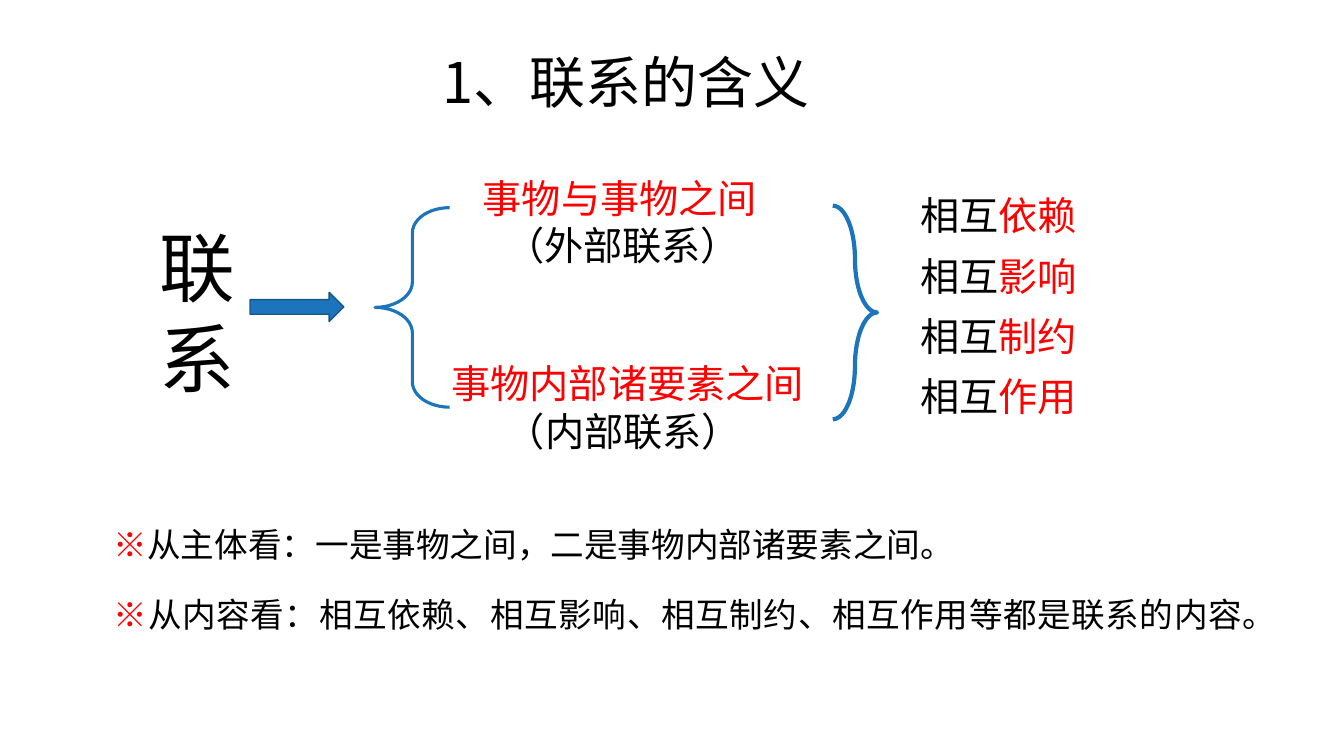
import dataclasses

import pptx
import pptx.dml.color
import pptx.enum.shapes
import pptx.enum.text
import pptx.util

Inches = pptx.util.Inches
Pt = pptx.util.Pt
Align = pptx.enum.text.PP_ALIGN
Shape = pptx.enum.shapes.MSO_SHAPE


@dataclasses.dataclass(frozen=True)
class Theme:
    black: str = "000000"
    red: str = "FF0000"
    blue: str = "1C75BC"
    edge: str = "15578B"
    head: str = "Noto Sans CJK SC"
    body: str = "Arial"
    title: int = 40
    term: int = 54
    text: int = 28
    note: int = 24


THEME = Theme()


def color(code):
    return pptx.dml.color.RGBColor.from_string(code)


def place(shape, box):
    shape.left, shape.top, shape.width, shape.height = map(Inches, box)


def write(frame, lines, size, font, gap=0):
    """Fill a frame with lines, each a list of (text, colour) runs."""
    frame.word_wrap = True
    frame.vertical_anchor = pptx.enum.text.MSO_ANCHOR.TOP
    for row, line in enumerate(lines):
        para = frame.paragraphs[0] if row == 0 else frame.add_paragraph()
        para.alignment = Align.LEFT
        if row and gap:
            para.space_before = Pt(gap)
        for text, code in line:
            run = para.add_run()
            run.text = text
            run.font.size = Pt(size)
            run.font.name = font
            run.font.color.rgb = color(code)


def add_text(slide, box, lines, size, font, gap=0):
    frame = slide.shapes.add_textbox(*map(Inches, box)).text_frame
    write(frame, lines, size, font, gap)
    return frame


def indent(para, first=0.0, left=0.0):
    props = para._p.get_or_add_pPr()
    props.set("marL", str(Inches(left)))
    props.set("indent", str(Inches(first)))


def add_title(slide, box):
    title = slide.shapes.title
    place(title, box)
    title.text_frame.auto_size = pptx.enum.text.MSO_AUTO_SIZE.NONE
    write(title.text_frame, [[("1、联系的含义", THEME.black)]],
          THEME.title, THEME.head)
    title.text_frame.paragraphs[0].line_spacing = 1.0


def add_mark(slide, kind, box, line, weight, fill=None, bend=None):
    mark = slide.shapes.add_shape(kind, *map(Inches, box))
    mark.shadow.inherit = False
    if fill:
        mark.fill.solid()
        mark.fill.fore_color.rgb = color(fill)
    else:
        mark.fill.background()
    mark.line.color.rgb = color(line)
    mark.line.width = Pt(weight)
    if bend:
        mark.adjustments[0] = bend


def add_branch(slide, box, name, kind, inset):
    frame = add_text(slide, box, [[(name, THEME.red)], [(kind, THEME.black)]],
                     THEME.text, THEME.body)
    indent(frame.paragraphs[1], left=inset)


def add_diagram(slide, box):
    """Lead from the term through its two branches to the four ties."""
    left, top, width, height = box
    add_text(slide, (left, top + 0.46, 0.96, 1.92),
             [[(sign, THEME.black)] for sign in "联系"],
             THEME.term, THEME.head)
    add_mark(slide, Shape.RIGHT_ARROW, (left + 1, top + 1.22, 0.93, 0.29),
             THEME.edge, 1, fill=THEME.blue)
    add_mark(slide, Shape.LEFT_BRACE, (left + 2.24, top + 0.38, 0.74, 1.98),
             THEME.blue, 2.25, bend=0.34)
    add_branch(slide, (left + 3.21, top, 3.28, 1.04),
               "事物与事物之间", "（外部联系）", 0.22)
    add_branch(slide, (left + 2.9, top + height - 1.04, 3.74, 1.04),
               "事物内部诸要素之间", "（内部联系）", 0.54)
    add_mark(slide, Shape.RIGHT_BRACE, (left + 6.78, top + 0.36, 0.44, 2.12),
             THEME.blue, 3, bend=2.08)
    ties = [[("相互", THEME.black), (tie, THEME.red)]
            for tie in ("依赖", "影响", "制约", "作用")]
    add_text(slide, (left + width - 2.46, top + 0.17, 2.46, 2.39),
             ties, THEME.text, THEME.body, gap=9.5)


def add_notes(slide, box):
    notes = (
        "从主体看：一是事物之间，二是事物内部诸要素之间。",
        "从内容看：相互依赖、相互影响、相互制约、相互作用等都是联系的内容。",
    )
    lines = [[("※", THEME.red), (note, THEME.black)] for note in notes]
    frame = add_text(slide, box, lines, THEME.note, THEME.head, gap=12.5)
    for para in frame.paragraphs:
        para.alignment = Align.JUSTIFY
        para.line_spacing = 1.3
        indent(para, first=0.41)


def main():
    deck = pptx.Presentation()
    deck.slide_width = Inches(13.33)
    deck.slide_height = Inches(7.5)
    slide = deck.slides.add_slide(deck.slide_layouts.get_by_name("Title Only"))
    add_title(slide, (4.29, 0.42, 4.19, 0.77))
    add_diagram(slide, (1.48, 1.68, 10.01, 2.88))
    add_notes(slide, (0.62, 5.03, 11.81, 1.27))
    deck.save("out.pptx")


if __name__ == "__main__":
    main()
